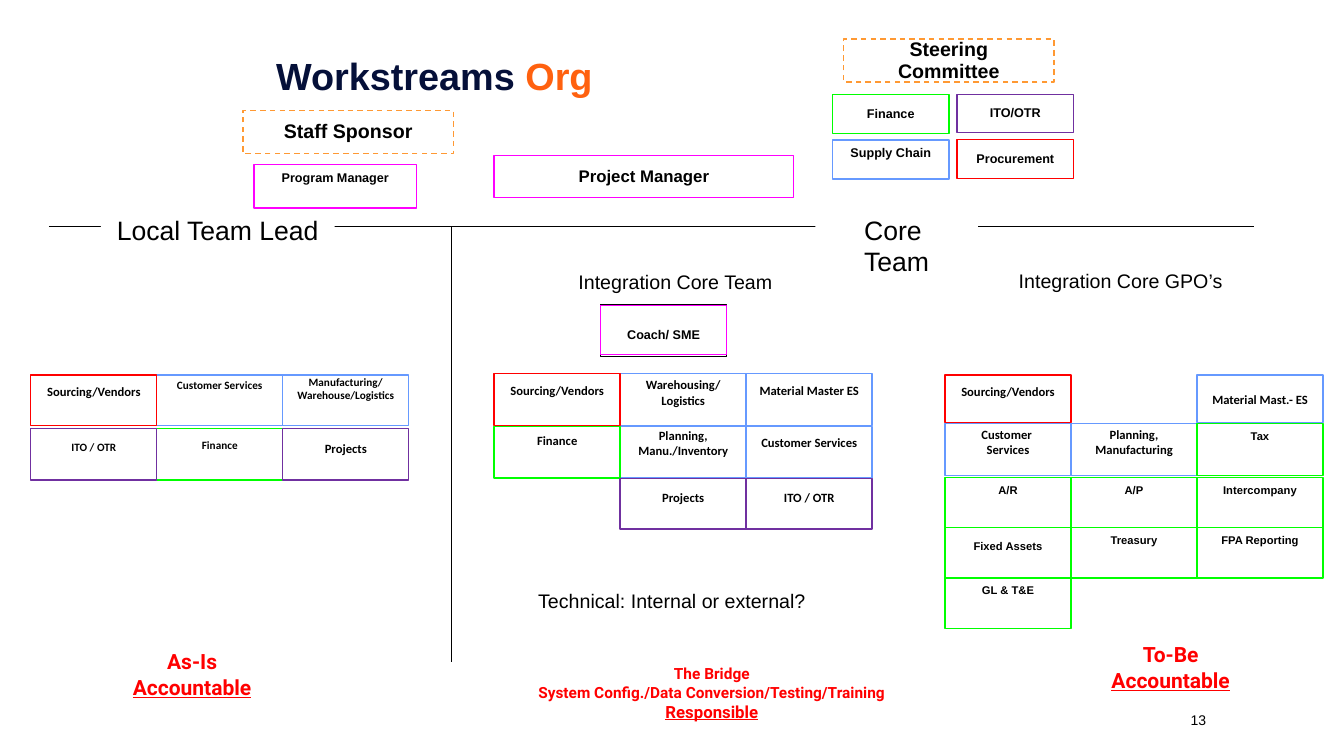
from lxml.etree import SubElement
from pptx import Presentation
from pptx.dml.color import RGBColor
from pptx.enum.dml import MSO_LINE
from pptx.enum.shapes import MSO_CONNECTOR, MSO_SHAPE
from pptx.enum.text import MSO_ANCHOR, PP_ALIGN
from pptx.oxml.ns import qn
from pptx.util import Pt

BLACK, WHITE, RED, GREEN = "000000", "FFFFFF", "FF0000", "00FF00"
BLUE, PURPLE, MAGENTA, ORANGE = "6699FF", "7030A0", "FF00FF", "FF9933"
COLUMN = 90
CALIBRI_9, CALIBRI_8, ARIAL_8 = ("Calibri", 9), ("Calibri", 8), ("Arial", 8)

TITLE = [("Workstreams ", "051039"), ("Org", "FF610F")]

# text, left, top, width, height
HEADINGS = [
    ("Local Team Lead", 72, 147.5, 167, 32, 19),
    ("Core \vTeam", 582.5, 147.5, 116, 55.5, 19),
    ("Integration Core Team", 399, 188, 167, 26.5, 14),
    ("Integration Core GPO’s", 715, 187, 171, 26.5, 14),
    ("Technical: Internal or external?", 354.5, 415.5, 251, 26.5, 14),
]

# text, left, top, width, height, size, outline, lead (None centres vertically)
ROLES = [
    ("Staff Sponsor", 173.5, 79, 150.5, 30.5, 14, ORANGE, None),
    ("Steering Committee", 602.5, 28, 150.5, 30.5, 14, ORANGE, None),
    ("Project Manager", 353, 111, 214, 30, 12, MAGENTA, None),
    ("Program Manager", 181.5, 117.5, 116, 31, 9, MAGENTA, 5),
    ("Finance", 594.5, 67.5, 83.5, 28, 9, GREEN, None),
    ("ITO/OTR", 683.5, 67.5, 83.5, 27, 9, PURPLE, None),
    ("Supply Chain", 594.5, 100, 83.5, 28, 9, BLUE, 4),
    ("Procurement", 683.5, 99.5, 83.5, 28, 9, RED, None),
]

# Each team: left edge, rows as (top, height), cells as
# (column, row, text, outline, (font, size), lead)
TEAMS = [
    (22, [(268, 36), (306, 37)], [
        (1, 0, "Customer Services", BLUE, CALIBRI_8, 2.5),
        (2, 0, "Manufacturing/Warehouse/Logistics", BLUE, CALIBRI_8, 0),
        (0, 0, "Sourcing/Vendors", RED, CALIBRI_9, 6.5),
        (1, 1, "Finance", GREEN, CALIBRI_8, 7),
        (2, 1, "Projects", PURPLE, CALIBRI_9, 9),
        (0, 1, "ITO / OTR", PURPLE, CALIBRI_8, 8.5),
    ]),
    (353, [(267, 37), (304.5, 37), (342, 36)], [
        (2, 0, "Material Master ES", BLUE, CALIBRI_9, 6.5),
        (1, 0, "Warehousing/Logistics", BLUE, CALIBRI_9, 2.5),
        (1, 1, "Planning, Manu./Inventory", BLUE, CALIBRI_9, 1),
        (2, 1, "Customer Services", BLUE, CALIBRI_9, 6),
        (0, 1, "Finance", GREEN, CALIBRI_9, 5),
        (1, 2, "Projects", PURPLE, CALIBRI_9, 8),
        (2, 2, "ITO / OTR", PURPLE, CALIBRI_9, 8),
        (0, 0, "Sourcing/Vendors", RED, CALIBRI_9, 6.5),
    ]),
    (675, [(268, 34), (302.5, 37), (341, 36), (377, 36), (413, 36)], [
        (2, 0, "Material Mast.- ES", BLUE, CALIBRI_9, 12),
        (0, 0, "Sourcing/Vendors", RED, CALIBRI_9, 6.5),
        (0, 1, "Customer \vServices", BLUE, CALIBRI_9, 2.5),
        (1, 1, "Planning, Manufacturing", BLUE, CALIBRI_9, 2.5),
        (2, 1, "Tax", GREEN, ARIAL_8, 4),
        (0, 2, "A/R", GREEN, ARIAL_8, 4),
        (1, 2, "A/P", GREEN, ARIAL_8, 4),
        (2, 2, "Intercompany", GREEN, ARIAL_8, 4),
        (0, 3, "Fixed Assets", GREEN, ARIAL_8, 8.5),
        (1, 3, "Treasury", GREEN, ARIAL_8, 4),
        (2, 3, "FPA Reporting", GREEN, ARIAL_8, 4),
        (0, 4, "GL & T&E", GREEN, ARIAL_8, 4),
    ]),
]

# text, underlined last line, left, top, width, height, size, last line size
DUTIES = [
    ("As-Is", "Accountable", 80, 458.5, 114.5, 45.5, 15, 15),
    ("The Bridge\nSystem Config./Data Conversion/Testing/Training", "Responsible",
     363, 469.5, 291, 50.5, 11, 12),
    ("To-Be", "Accountable", 779, 453.5, 114.5, 45.5, 15, 15),
]

DIVIDERS = [(35, 161.5, 896, 161.5), (322.5, 161.5, 322.5, 473)]


def rgb(color):
    return RGBColor.from_string(color)


def write(frame, text, *, font="Arial", size=9, bold=True, color=BLACK, spacing=1.0,
          lead=None, side=9, underlined=None, last_size=None):
    frame.word_wrap = True
    frame.margin_left = frame.margin_right = Pt(side)
    frame.margin_top, frame.margin_bottom = Pt(5 if lead is None else lead), Pt(0 if lead is not None else 5)
    frame.vertical_anchor = MSO_ANCHOR.MIDDLE if lead is None else MSO_ANCHOR.TOP
    frame.text = f"{text}\n{underlined}" if underlined else text
    for paragraph in frame.paragraphs:
        paragraph.alignment = PP_ALIGN.CENTER
        paragraph.line_spacing = spacing
        for run in paragraph.runs:
            run.font.name, run.font.size, run.font.bold = font, Pt(size), bold
            run.font.color.rgb = rgb(color)
    if underlined:
        run.font.underline = True
        run.font.size = Pt(last_size)


def rectangle(slide, left, top, width, height, *, fill=WHITE, outline=None, weight=1):
    shape = slide.shapes.add_shape(MSO_SHAPE.RECTANGLE, Pt(left), Pt(top), Pt(width), Pt(height))
    shape.shadow.inherit = False
    if fill:
        shape.fill.solid()
        shape.fill.fore_color.rgb = rgb(fill)
    else:
        shape.fill.background()
    if outline:
        shape.line.color.rgb = rgb(outline)
        shape.line.width = Pt(weight)
    else:
        shape.line.fill.background()
    return shape


def textbox(slide, left, top, width, height):
    return slide.shapes.add_textbox(Pt(left), Pt(top), Pt(width), Pt(height)).text_frame


def add_title(slide):
    title = slide.shapes.title
    title.left, title.top, title.width, title.height = Pt(190), Pt(19.5), Pt(616), Pt(69)
    title.text_frame.vertical_anchor = MSO_ANCHOR.MIDDLE
    paragraph = title.text_frame.paragraphs[0]
    paragraph.alignment = PP_ALIGN.LEFT
    for words, color in TITLE:
        run = paragraph.add_run()
        run.text = words
        run.font.name, run.font.size, run.font.bold = "Arial", Pt(27), True
        run.font.color.rgb = rgb(color)


def main():
    deck = Presentation()
    deck.slide_width, deck.slide_height = Pt(960), Pt(540)
    slide = deck.slides.add_slide(deck.slide_layouts[5])
    add_title(slide)

    for ends in DIVIDERS:
        divider = slide.shapes.add_connector(MSO_CONNECTOR.STRAIGHT, *map(Pt, ends))
        divider.line.color.rgb = rgb(BLACK)
        divider.line.width = Pt(0.75)
        SubElement(divider.element.spPr, qn("a:effectLst"))

    for text, left, top, width, height, size in HEADINGS:
        heading = rectangle(slide, left, top, width, height)
        write(heading.text_frame, text, size=size, bold=False, lead=5)

    for text, left, top, width, height, size, outline, lead in ROLES:
        role = rectangle(slide, left, top, width, height, outline=outline)
        if outline == ORANGE:
            role.line.dash_style = MSO_LINE.DASH
        write(role.text_frame, text, size=size, spacing=0.95, lead=lead)

    rectangle(slide, 429, 217.5, COLUMN, 37, outline=BLACK)
    coach = rectangle(slide, 429, 218, COLUMN, 35.5, fill=None, outline=MAGENTA, weight=0.75)
    write(coach.text_frame, "Coach/ SME", lead=15.5)

    for left, rows, cells in TEAMS:
        for column, row, text, outline, (font, size), lead in cells:
            top, height = rows[row]
            cell = rectangle(slide, left + column * COLUMN, top, COLUMN, height, outline=outline)
            write(cell.text_frame, text, font=font, size=size, lead=lead, side=6)

    for text, underlined, left, top, width, height, size, last_size in DUTIES:
        write(textbox(slide, left, top, width, height), text, font="Roboto", size=size,
              color=RED, lead=5, underlined=underlined, last_size=last_size)

    write(textbox(slide, 833, 498, 46, 32), "13", size=10, bold=False)
    deck.save("out.pptx")


if __name__ == "__main__":
    main()
